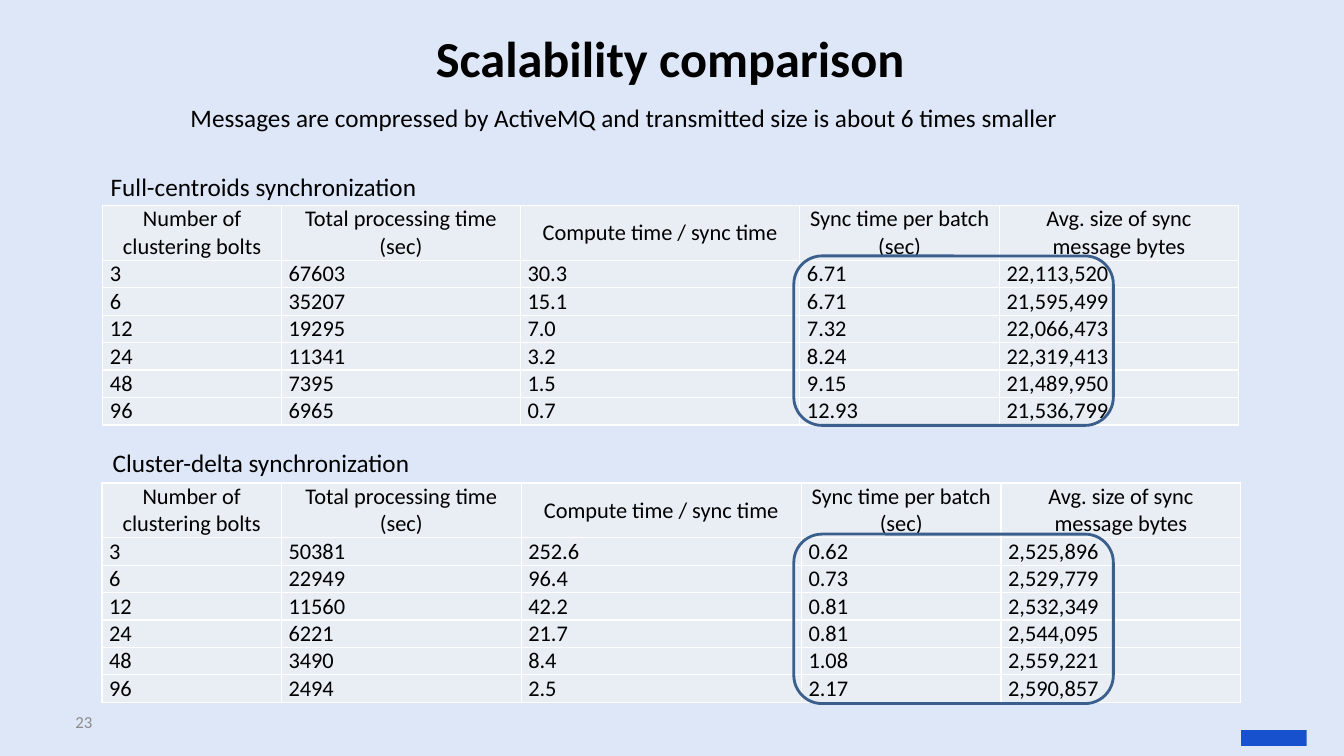
from dataclasses import dataclass

from lxml import etree
from pptx import Presentation
from pptx.dml.color import RGBColor
from pptx.enum import shapes, text
from pptx.oxml import ns
from pptx.util import Cm, Pt

FONT = "Calibri"
COLORS = {
    "background": "DEE7F8",
    "text": "000000",
    "number": "8C8C8C",
    "cell": "E9EDF4",
    "border": "FFFFFF",
    "highlight": "3A5F8C",
    "mark": "1851CE",
}
HEADERS = [
    "Number of clustering bolts",
    "Total processing time (sec)",
    "Compute time / sync time",
    "Sync time per batch (sec)",
    "Avg. size of sync message bytes",
]
HEADER_HEIGHT, ROW_HEIGHT = 1.38, 0.67


@dataclass
class Label:
    words: str
    left: float
    top: float
    width: float
    height: float = 1.03
    size: int = 18
    color: str = "text"
    bold: bool = False
    align: text.PP_ALIGN = text.PP_ALIGN.LEFT
    anchor: text.MSO_ANCHOR = text.MSO_ANCHOR.TOP


@dataclass
class Result:
    left: float
    top: float
    widths: list[float]
    rows: list[list[str]]
    highlight_top: float


LABELS = [
    Label("Scalability comparison", 1.65, 0.36, 30.48, 2.18, 36, bold=True,
          align=text.PP_ALIGN.CENTER, anchor=text.MSO_ANCHOR.MIDDLE),
    Label("Messages are compressed by ActiveMQ and transmitted size is about 6 times smaller",
          4.55, 2.46, 25.73),
    Label("Full-centroids synchronization", 2.54, 4.19, 10.41),
    Label("Cluster-delta synchronization", 2.59, 11.15, 10.41),
    Label("23", 1.65, 17.68, 7.9, 1.02, 12, "number", anchor=text.MSO_ANCHOR.MIDDLE),
]
RESULTS = [
    Result(2.59, 5.18, [4.5, 6.02, 7.04, 5.03, 6.02], [
        ["3", "67603", "30.3", "6.71", "22,113,520"],
        ["6", "35207", "15.1", "6.71", "21,595,499"],
        ["12", "19295", "7.0", "7.32", "22,066,473"],
        ["24", "11341", "3.2", "8.24", "22,319,413"],
        ["48", "7395", "1.5", "9.15", "21,489,950"],
        ["96", "6965", "0.7", "12.93", "21,536,799"],
    ], 6.45),
    Result(2.57, 12.17, [4.52, 6.04, 7.06, 5.03, 6.04], [
        ["3", "50381", "252.6", "0.62", "2,525,896"],
        ["6", "22949", "96.4", "0.73", "2,529,779"],
        ["12", "11560", "42.2", "0.81", "2,532,349"],
        ["24", "6221", "21.7", "0.81", "2,544,095"],
        ["48", "3490", "8.4", "1.08", "2,559,221"],
        ["96", "2494", "2.5", "2.17", "2,590,857"],
    ], 13.46),
]


def rgb(name: str) -> RGBColor:
    return RGBColor.from_string(COLORS[name])


def style_paragraph(p, size: int, color: str, align: text.PP_ALIGN, bold: bool = False) -> None:
    p.alignment = align
    p.font.name = FONT
    p.font.size = Pt(size)
    p.font.bold = bold
    p.font.color.rgb = rgb(color)


def add_label(slide, label: Label) -> None:
    sp = slide.shapes.add_textbox(Cm(label.left), Cm(label.top), Cm(label.width), Cm(label.height))
    tf = sp.text_frame
    tf.word_wrap = True
    tf.vertical_anchor = label.anchor
    tf.text = label.words
    style_paragraph(tf.paragraphs[0], label.size, label.color, label.align, label.bold)


def add_borders(cell) -> None:
    props = cell._tc.get_or_add_tcPr()
    for side in ("lnL", "lnR", "lnT", "lnB"):
        line = etree.SubElement(props, ns.qn(f"a:{side}"), w=str(Pt(1)))
        fill = etree.SubElement(line, ns.qn("a:solidFill"))
        etree.SubElement(fill, ns.qn("a:srgbClr"), val=COLORS["border"])


def fill_cell(cell, words: str, align: text.PP_ALIGN) -> None:
    add_borders(cell)
    cell.fill.solid()
    cell.fill.fore_color.rgb = rgb("cell")
    cell.vertical_anchor = text.MSO_ANCHOR.MIDDLE
    cell.margin_left = cell.margin_right = Cm(0.18)
    cell.margin_top = cell.margin_bottom = 0
    cell.text = words
    style_paragraph(cell.text_frame.paragraphs[0], 16, "text", align)


def add_result(slide, result: Result) -> None:
    rows = [HEADERS] + result.rows
    heights = [HEADER_HEIGHT] + [ROW_HEIGHT] * len(result.rows)
    table = slide.shapes.add_table(len(rows), len(HEADERS), Cm(result.left), Cm(result.top),
                                   Cm(sum(result.widths)), Cm(sum(heights))).table
    table.first_row = table.horz_banding = False
    for column, width in zip(table.columns, result.widths):
        column.width = Cm(width)
    for i, (row, height) in enumerate(zip(rows, heights)):
        table.rows[i].height = Cm(height)
        align = text.PP_ALIGN.JUSTIFY if i else text.PP_ALIGN.CENTER
        for j, words in enumerate(row):
            fill_cell(table.cell(i, j), words, align)


def add_highlight(slide, result: Result) -> None:
    sp = slide.shapes.add_shape(shapes.MSO_SHAPE.ROUNDED_RECTANGLE,
                                Cm(20), Cm(result.highlight_top), Cm(8.05), Cm(4.27))
    sp.shadow.inherit = False
    sp.fill.background()
    sp.line.color.rgb = rgb("highlight")
    sp.line.width = Pt(2)


def add_corner_mark(slide) -> None:
    sp = slide.shapes.add_shape(shapes.MSO_SHAPE.RECTANGLE, Cm(31.27), Cm(18.4), Cm(1.65), Cm(0.4))
    sp.shadow.inherit = False
    sp.fill.solid()
    sp.fill.fore_color.rgb = rgb("mark")
    sp.line.fill.background()


def main() -> None:
    prs = Presentation()
    prs.slide_width, prs.slide_height = Cm(33.86), Cm(19.05)
    slide = prs.slides.add_slide(prs.slide_layouts[6])
    slide.background.fill.solid()
    slide.background.fill.fore_color.rgb = rgb("background")

    # Corner mark
    add_corner_mark(slide)
    # Result tables
    for result in RESULTS:
        add_result(slide, result)
    # Title, captions and slide number
    for label in LABELS:
        add_label(slide, label)
    # Outlines around the synchronization columns
    for result in RESULTS:
        add_highlight(slide, result)

    prs.save("out.pptx")


if __name__ == "__main__":
    main()
